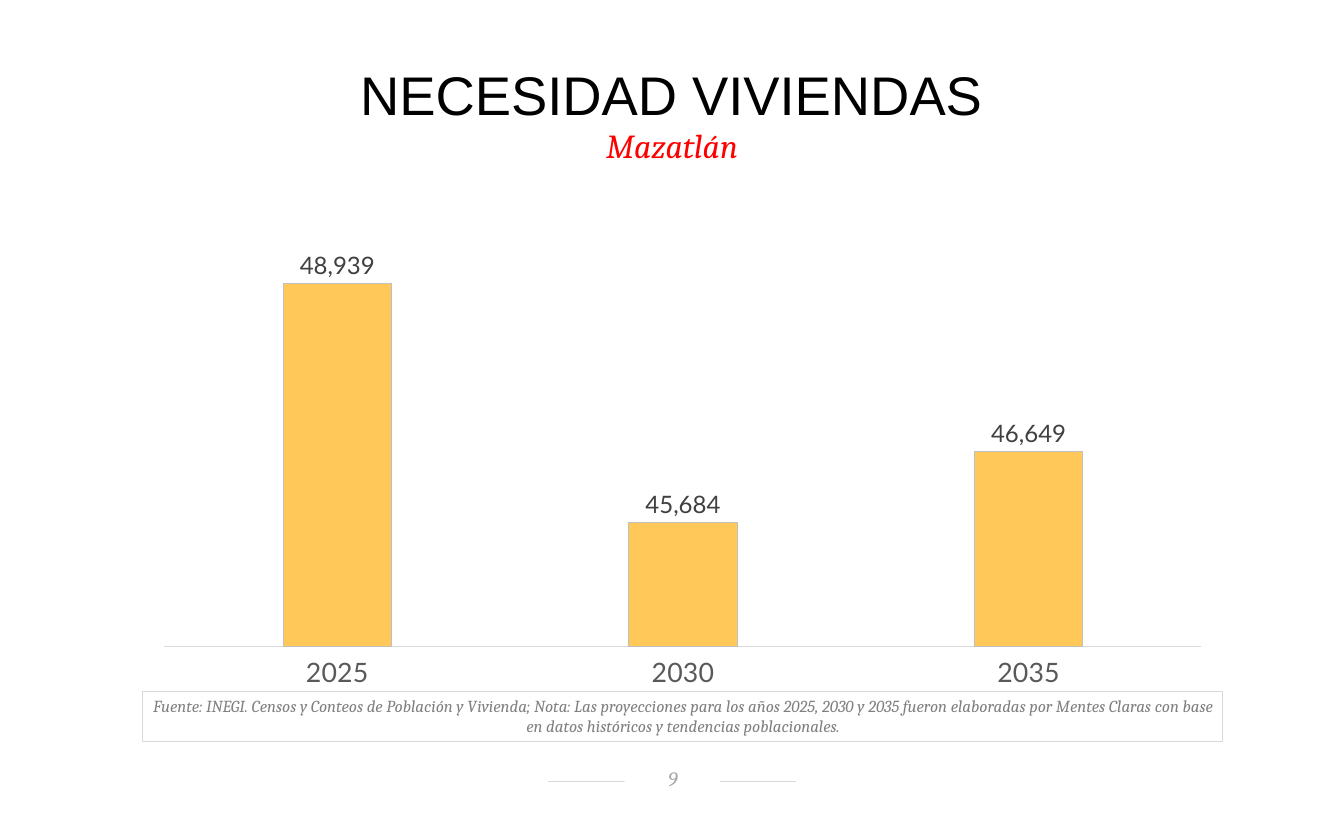
import pptx
import pptx.util
import pptx.chart.data
import pptx.oxml
from pptx.dml.color import RGBColor
from pptx.enum.chart import XL_CHART_TYPE, XL_LABEL_POSITION, XL_TICK_LABEL_POSITION, XL_TICK_MARK
from pptx.enum.shapes import MSO_CONNECTOR, MSO_SHAPE
from pptx.enum.text import MSO_ANCHOR, MSO_AUTO_SIZE, PP_ALIGN

Cm, Pt = pptx.util.Cm, pptx.util.Pt

# Content
TITLE = "NECESIDAD VIVIENDAS"
PLACE = "Mazatlán"
NEEDS = [("2025", 48939), ("2030", 45684), ("2035", 46649)]
SOURCE = ("Fuente: INEGI. Censos y Conteos de Población y Vivienda; Nota: Las proyecciones "
          "para los años 2025, 2030 y 2035 fueron elaboradas por Mentes Claras con base "
          "en datos históricos y tendencias poblacionales.")
PAGE = "9"

# Colours
BLACK = RGBColor(0x00, 0x00, 0x00)
RED = RGBColor(0xFF, 0x00, 0x00)
WHITE = RGBColor(0xFF, 0xFF, 0xFF)
AMBER = RGBColor(0xFF, 0xC8, 0x59)
RULE = RGBColor(0xD9, 0xD9, 0xD9)
EDGE = RGBColor(0xBF, 0xBF, 0xBF)
PALE = RGBColor(0xA6, 0xA6, 0xA6)
GREY = RGBColor(0x80, 0x80, 0x80)
DARK = RGBColor(0x59, 0x59, 0x59)
DEEP = RGBColor(0x40, 0x40, 0x40)

# Page grid in cm
WIDE, HIGH = 35.56, 21.59
LEFT, SPAN = 3.78, 28.58      # shared by chart and source note
MID = WIDE / 2


def style(font, name, size, color, italic=False):
    font.name, font.size, font.italic = name, Pt(size), italic
    font.color.rgb = color


def place(shape, left, top, width, height):
    shape.left, shape.top = Cm(left), Cm(top)
    shape.width, shape.height = Cm(width), Cm(height)


def write(shape, text, name, size, color, italic=False, anchor=MSO_ANCHOR.TOP):
    frame = shape.text_frame
    frame.word_wrap = True
    frame.auto_size = MSO_AUTO_SIZE.NONE
    frame.vertical_anchor = anchor
    para = frame.paragraphs[0]
    para.alignment = PP_ALIGN.CENTER
    run = para.add_run()
    run.text = text
    style(run.font, name, size, color, italic)
    return para


def rule(line, color):
    line.color.rgb = color
    line.width = Pt(0.75)


deck = pptx.Presentation()
deck.slide_width, deck.slide_height = Cm(WIDE), Cm(HIGH)
slide = deck.slides.add_slide(deck.slide_layouts[5])
shapes = slide.shapes

# Page number over a broken rule
half, top = 3.28, 20.68
bar = shapes.add_connector(MSO_CONNECTOR.STRAIGHT, Cm(MID - half), Cm(top), Cm(MID + half), Cm(top))
rule(bar.line, RULE)
pptx.oxml.xmlchemy.OxmlElement  # effect list factory
bar._element.spPr.append(pptx.oxml.parse_xml(
    '<a:effectLst xmlns:a="http://schemas.openxmlformats.org/drawingml/2006/main"/>'))

tag = shapes.add_shape(MSO_SHAPE.RECTANGLE, Cm(16.53), Cm(20.27), Cm(2.52), Cm(0.74))
tag.shadow.inherit = False
tag.fill.solid()
tag.fill.fore_color.rgb = WHITE
tag.line.fill.background()
write(tag, PAGE, "Cambria", 15.4, PALE, True, MSO_ANCHOR.MIDDLE)
tag.text_frame.margin_left, tag.text_frame.margin_top = Cm(0.28), Cm(0.05)

# Source note
note = shapes.add_shape(MSO_SHAPE.RECTANGLE, Cm(LEFT), Cm(18.29), Cm(SPAN), Cm(1.34))
note.shadow.inherit = False
note.fill.background()
rule(note.line, RULE)
write(note, SOURCE, "Cambria", 12.6, GREY, True)

# Title and place
head = shapes.title
place(head, 1.24, 1.93, 33.05, 1.52)
write(head, TITLE, "Arial", 40.8, BLACK).line_spacing = 0.7
frame = head.text_frame
frame.margin_left = frame.margin_right = Cm(0.3)
frame.margin_top = frame.margin_bottom = Cm(0.15)

sub = shapes.add_textbox(Cm(-0.89), Cm(3.18), Cm(37.34), Cm(1.35))
write(sub, PLACE, "Cambria", 25.2, RED, True).space_after = Pt(4.2)

# Column chart
data = pptx.chart.data.CategoryChartData(number_format="#,##0")
data.categories = [year for year, _ in NEEDS]
data.add_series("Viviendas", [need for _, need in NEEDS])
chart = shapes.add_chart(XL_CHART_TYPE.COLUMN_CLUSTERED, Cm(LEFT), Cm(5.16),
                         Cm(SPAN), Cm(13.13), data).chart
chart.has_legend = chart.has_title = False
style(chart.font, "Calibri", 10, BLACK)

years = chart.category_axis
years.major_tick_mark = XL_TICK_MARK.NONE
years.tick_label_position = XL_TICK_LABEL_POSITION.LOW
years.has_major_gridlines = False
style(years.tick_labels.font, "Lato", 20, DARK)
rule(years.format.line, RULE)

scale = chart.value_axis
scale.visible = scale.has_major_gridlines = False
scale.minimum_scale, scale.maximum_scale = 44000, 50000

plot = chart.plots[0]
plot.gap_width, plot.overlap = 219, -27
plot.vary_by_categories = False
bars = plot.series[0]
bars.format.fill.solid()
bars.format.fill.fore_color.rgb = AMBER
rule(bars.format.line, EDGE)
labels = bars.data_labels
labels.show_value = True
labels.number_format, labels.number_format_is_linked = "#,##0", False
labels.position = XL_LABEL_POSITION.OUTSIDE_END
style(labels.font, "Lato", 18, DEEP)

# Fixed inner plot area, as shares of the chart
area = chart._chartSpace.chart.plotArea
for old in area.findall("{*}layout"):
    area.remove(old)
parts = [("layoutTarget", "inner"), ("xMode", "edge"), ("yMode", "edge"),
         ("x", 0.02), ("y", 0.02), ("w", 0.96), ("h", 0.89)]
inner = "".join(f'<c:{key} val="{val}"/>' for key, val in parts)
area.insert(0, pptx.oxml.parse_xml(
    '<c:layout xmlns:c="http://schemas.openxmlformats.org/drawingml/2006/chart">'
    f'<c:manualLayout>{inner}</c:manualLayout></c:layout>'))

deck.save("out.pptx")
